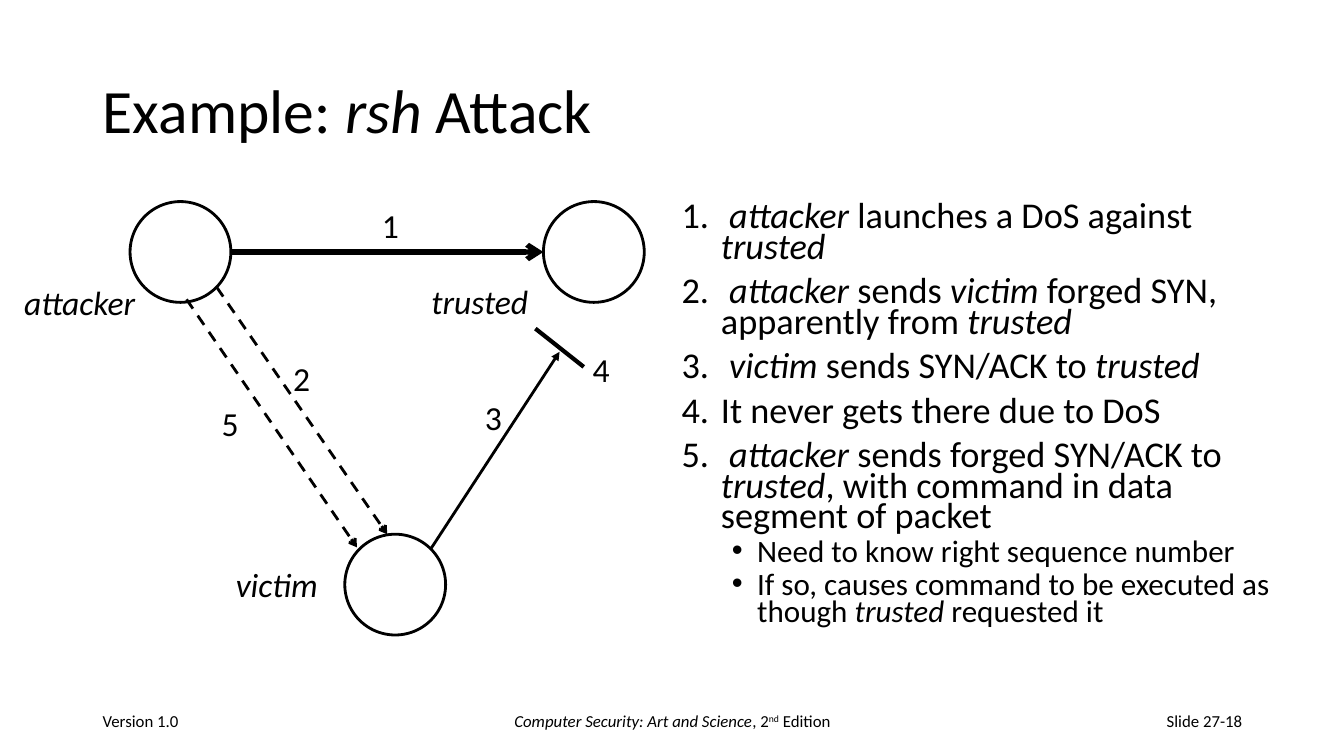
from lxml import etree
from pptx import Presentation
from pptx import util as u
from pptx.dml.color import RGBColor
from pptx.enum import dml, shapes, text
from pptx.oxml import ns

PX = 9144  # EMU per px, 100 px to the inch
FONT = "Calibri"
COLORS = {"ink": "000000"}
ALIGN = text.PP_ALIGN
ANCHOR = text.MSO_ANCHOR

NODE_SIZE = 100
NODES = [(129, 200), (539, 200), (342, 530)]  # attacker, trusted, victim

# start, end, width in points, arrowhead, dashed
MESSAGES = [
    ((229, 250), (539, 250), 3.75, "arrow", False),
    ((215, 285), (384, 530), 2, "arrow", True),
    ((427, 545), (555, 349), 2, "triangle", False),
    ((531, 326), (579, 364), 3, None, False),
    ((185, 297), (354, 543), 2, "arrow", True),
]

# text, left, top, width
LABELS = [
    ("*attacker*", 14, 275, 132),
    ("*trusted*", 418, 274, 117),
    ("*victim*", 224, 555, 103),
    ("1", 369, 198, 37),
    ("2", 281, 350, 37),
    ("3", 471, 389, 37),
    ("4", 578, 341, 37),
    ("5", 210, 395, 37),
]

STEPS = [
    " *attacker* launches a DoS against *trusted*",
    " *attacker* sends *victim* forged SYN, apparently from *trusted*",
    " *victim* sends SYN/ACK to *trusted*",
    "It never gets there due to DoS",
    " *attacker* sends forged SYN/ACK to *trusted*, with command in data segment of packet",
]
DETAILS = [
    "Need to know right sequence number",
    "If so, causes command to be executed as though *trusted* requested it",
]

# text, left, width, alignment
FOOTERS = [
    ("Version 1.0", 92, 300, ALIGN.LEFT),
    ("*Computer Security: Art and Science*, 2^nd^ Edition", 442, 450, ALIGN.CENTER),
    ("Slide 27-18", 942, 300, ALIGN.RIGHT),
]


def px(*lengths):
    return [u.Emu(length * PX) for length in lengths]


def color(name):
    return RGBColor.from_string(COLORS[name])


def add_element(parent, tag, **attributes):
    return etree.SubElement(parent, ns.qn(tag), attributes)


def write(paragraph, content, size, align=ALIGN.LEFT, line_spacing=None, before=0):
    """Fill a paragraph; *...* is italic and ^...^ is superscript."""
    paragraph.alignment = align
    paragraph.space_before = u.Pt(before)
    if line_spacing:
        paragraph.line_spacing = line_spacing
    for i, part in enumerate(content.split("*")):
        for j, piece in enumerate(part.split("^")):
            if not piece:
                continue
            run = paragraph.add_run()
            run.text = piece
            font = run.font
            font.name, font.size, font.italic = FONT, u.Pt(size), i % 2 == 1
            font.color.rgb = color("ink")
            if j % 2:
                run._r.get_or_add_rPr().set("baseline", "30000")


def place(shape, left, top, width, height):
    shape.left, shape.top, shape.width, shape.height = px(left, top, width, height)


def set_frame(frame, anchor, wrap=True):
    frame.word_wrap = wrap
    frame.auto_size = text.MSO_AUTO_SIZE.NONE
    frame.vertical_anchor = anchor


def set_bullet(paragraph, margin, hanging, tag, **attributes):
    properties = paragraph._p.get_or_add_pPr()
    properties.set("marL", str(margin * PX))
    properties.set("indent", str(-hanging * PX))
    add_element(properties, "a:buFont", typeface="Arial" if tag == "a:buChar" else "+mj-lt")
    add_element(properties, tag, **attributes)


def add_label(slide, content, box, size, align=ALIGN.LEFT, anchor=ANCHOR.TOP, wrap=False):
    label = slide.shapes.add_textbox(*px(*box))
    set_frame(label.text_frame, anchor, wrap)
    write(label.text_frame.paragraphs[0], content, size, align)


def add_node(slide, left, top):
    node = slide.shapes.add_shape(
        shapes.MSO_SHAPE.OVAL, *px(left, top, NODE_SIZE, NODE_SIZE))
    node.shadow.inherit = False
    node.fill.background()
    node.line.color.rgb = color("ink")
    node.line.width = u.Pt(2)


def add_message(slide, start, end, width, head, dashed):
    connector = slide.shapes.add_connector(
        shapes.MSO_CONNECTOR.STRAIGHT, *px(*start, *end))
    line = connector.line
    line.color.rgb = color("ink")
    line.width = u.Pt(width)
    if dashed:
        line.dash_style = dml.MSO_LINE.DASH
    if head:
        add_element(line._get_or_add_ln(), "a:tailEnd", type=head)
    add_element(connector._element.spPr, "a:effectLst")


def add_steps(body):
    frame = body.text_frame
    set_frame(frame, ANCHOR.TOP)
    for i, step in enumerate(STEPS):
        paragraph = frame.add_paragraph() if i else frame.paragraphs[0]
        set_bullet(paragraph, 39, 39, "a:buAutoNum", type="arabicPeriod")
        write(paragraph, step, 25.9, line_spacing=0.7, before=10 if i else 0)
    for detail in DETAILS:
        paragraph = frame.add_paragraph()
        paragraph.level = 1
        set_bullet(paragraph, 75, 25, "a:buChar", char="•")
        write(paragraph, detail, 22.2, line_spacing=0.7, before=5)


def main():
    presentation = Presentation()
    presentation.slide_width, presentation.slide_height = px(1333, 750)
    slide = presentation.slides.add_slide(presentation.slide_layouts[1])

    # Title and numbered steps
    title, body = slide.placeholders
    place(title, 92, 40, 1150, 145)
    set_frame(title.text_frame, ANCHOR.MIDDLE)
    write(title.text_frame.paragraphs[0], "Example: *rsh* Attack", 44, line_spacing=0.9)
    place(body, 666, 198, 614, 476)
    add_steps(body)

    # Footer
    for content, left, width, align in FOOTERS:
        add_label(slide, content, (left, 695, width, 40), 12, align, ANCHOR.MIDDLE, True)

    # Attack diagram
    for left, top in NODES:
        add_node(slide, left, top)
    for message in MESSAGES:
        add_message(slide, *message)
    for content, left, top, width in LABELS:
        add_label(slide, content, (left, top, width, 50), 24)

    presentation.save("out.pptx")


if __name__ == "__main__":
    main()
